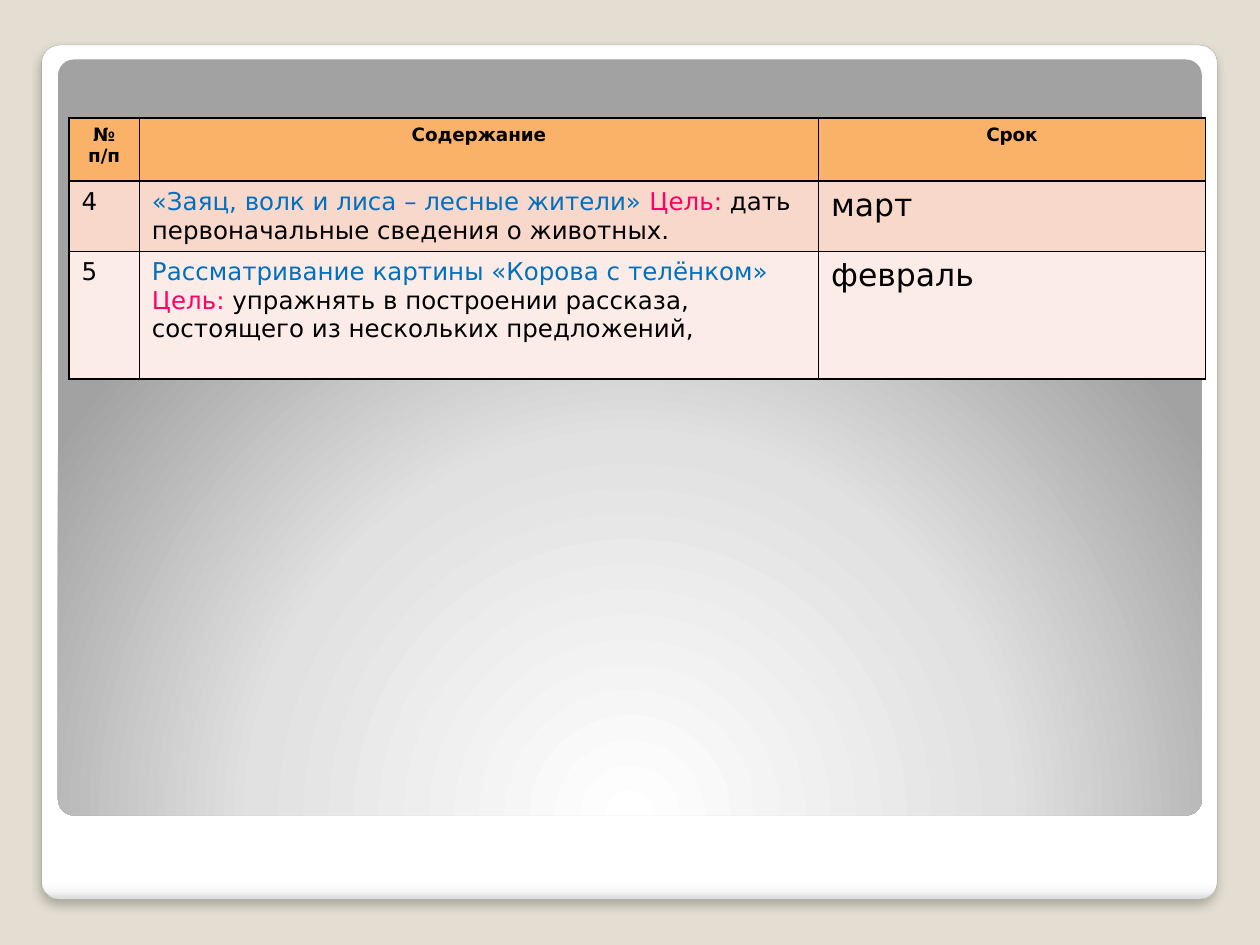
from dataclasses import dataclass

from lxml import etree
from pptx import Presentation
from pptx import util as u
from pptx.dml.color import RGBColor
from pptx.enum import shapes, text
from pptx.oxml import ns


@dataclass(frozen=True)
class Theme:
    font: str = "DejaVu Sans"
    background: str = "E3DED1"
    card_line: str = "A4A4A4"
    black: str = "000000"
    topic: str = "0070C0"
    goal: str = "FF0066"
    header_fill: str = "F9B268"
    row_fills: tuple = ("F9D8CC", "FCECE7")
    card_stops: tuple = ((0, "FFFFFF"), (98, "FFFFFF"), (99, "F7F7F7"), (100, "DADADA"))
    panel_stops: tuple = ((0, "FFFFFF"), (55, "E1E1E1"), (100, "A2A2A2"))
    header_size: float = 10.5
    body_size: float = 14
    month_size: float = 18


def add_xml(parent, tag, **attributes):
    values = {name: str(value) for name, value in attributes.items()}
    return etree.SubElement(parent, ns.qn(tag), values)


class SlideBuilder:
    def __init__(self, presentation, theme):
        self.theme = theme
        self.slide = presentation.slides.add_slide(presentation.slide_layouts[6])
        fill = self.slide.background.fill
        fill.solid()
        fill.fore_color.rgb = RGBColor.from_string(theme.background)

    def rounded_panel(self, left, top, width, height, stops, center=None):
        """Rounded rectangle, shaded downwards or in circles around center."""
        shape = self.slide.shapes.add_shape(
            shapes.MSO_SHAPE.ROUNDED_RECTANGLE, *map(u.Cm, (left, top, width, height)))
        shape.adjustments[0] = 0.021
        shape.shadow.inherit = False
        shape.line.fill.background()
        properties = shape._element.spPr
        gradient = etree.Element(ns.qn("a:gradFill"), rotWithShape="1")
        stop_list = add_xml(gradient, "a:gsLst")
        for position, color in stops:
            stop = add_xml(stop_list, "a:gs", pos=position * 1000)
            add_xml(stop, "a:srgbClr", val=color)
        if center:
            circle = add_xml(gradient, "a:path", path="circle")
            edges = {side: percent * 1000 for side, percent in zip("ltrb", center)}
            add_xml(circle, "a:fillToRect", **edges)
        else:
            add_xml(gradient, "a:lin", ang=90 * 60000, scaled=0)
        properties.find(ns.qn("a:prstGeom")).addnext(gradient)
        return shape

    def outline(self, shape, color, width):
        shape.line.color.rgb = RGBColor.from_string(color)
        shape.line.width = u.Pt(width)

    def drop_shadow(self, shape, blur, distance, opacity):
        effects = shape._element.spPr.find(ns.qn("a:effectLst"))
        shadow = add_xml(effects, "a:outerShdw", blurRad=u.Pt(blur), dist=u.Pt(distance),
                         dir=90 * 60000, algn="t", rotWithShape=0)
        color = add_xml(shadow, "a:srgbClr", val=self.theme.black)
        add_xml(color, "a:alpha", val=opacity * 1000)

    def table(self, left, top, columns, rows):
        frame = self.slide.shapes.add_table(
            len(rows), len(columns), u.Cm(left), u.Cm(top),
            u.Cm(sum(columns)), u.Cm(sum(rows)))
        for column, width in zip(frame.table.columns, columns):
            column.width = u.Cm(width)
        for row, height in zip(frame.table.rows, rows):
            row.height = u.Cm(height)
        return frame.table

    def cell(self, cell, paragraphs, fill, size, bold=False, align=text.PP_ALIGN.LEFT):
        """Fill a cell; each paragraph is a list of (wording, color) runs."""
        properties = cell._tc.get_or_add_tcPr()
        for side in "LRTB":
            border = add_xml(properties, f"a:ln{side}", w=u.Pt(1))
            add_xml(add_xml(border, "a:solidFill"), "a:srgbClr", val=self.theme.black)
        cell.fill.solid()
        cell.fill.fore_color.rgb = RGBColor.from_string(fill)
        for index, runs in enumerate(paragraphs):
            frame = cell.text_frame
            paragraph = frame.add_paragraph() if index else frame.paragraphs[0]
            paragraph.alignment = align
            for wording, color in runs:
                run = paragraph.add_run()
                run.text = wording
                run.font.name = self.theme.font
                run.font.size = u.Pt(size)
                run.font.bold = bold
                run.font.color.rgb = RGBColor.from_string(color)


def main():
    theme = Theme()
    presentation = Presentation()
    presentation.slide_width = u.Cm(25.4)
    presentation.slide_height = u.Cm(19.05)
    builder = SlideBuilder(presentation, theme)

    # White card with the grey panel on it
    card = builder.rounded_panel(0.84, 0.91, 23.7, 17.22, theme.card_stops)
    builder.outline(card, theme.card_line, 0.16)
    builder.drop_shadow(card, blur=6, distance=4, opacity=25)
    builder.rounded_panel(1.17, 1.2, 23.06, 15.24, theme.panel_stops,
                          center=(50, 175, 50, -75))

    # Table heading
    plan = builder.table(1.39, 2.38, columns=(1.42, 13.69, 7.8), rows=(1.27, 1.41, 2.58))
    headings = (("№", "п/п"), ("Содержание",), ("Срок",))
    for column, lines in enumerate(headings):
        builder.cell(plan.cell(0, column), [[(line, theme.black)] for line in lines],
                     theme.header_fill, theme.header_size, True, text.PP_ALIGN.CENTER)

    # Lessons: number, topic, goal, month
    lessons = (
        ("4", "«Заяц, волк и лиса – лесные жители» ",
         "дать первоначальные сведения о животных.", "март"),
        ("5", "Рассматривание картины «Корова с телёнком» ",
         "упражнять в построении рассказа, состоящего из нескольких предложений,",
         "февраль"),
    )
    for row, (lesson, fill) in enumerate(zip(lessons, theme.row_fills), start=1):
        number, topic, goal, month = lesson
        content = [(topic, theme.topic), ("Цель: ", theme.goal), (goal, theme.black)]
        builder.cell(plan.cell(row, 0), [[(number, theme.black)]], fill, theme.body_size)
        builder.cell(plan.cell(row, 1), [content], fill, theme.body_size)
        builder.cell(plan.cell(row, 2), [[(month, theme.black)]], fill, theme.month_size)

    presentation.save("out.pptx")


if __name__ == "__main__":
    main()
